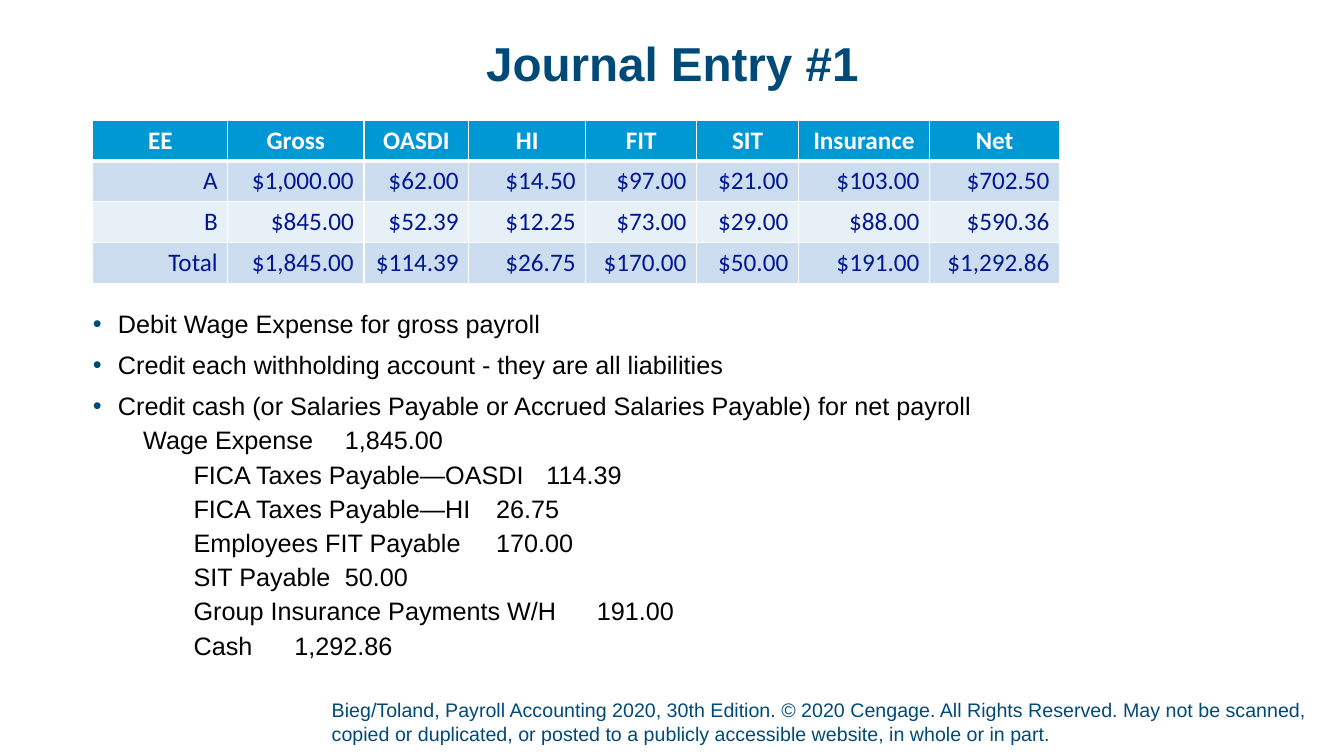
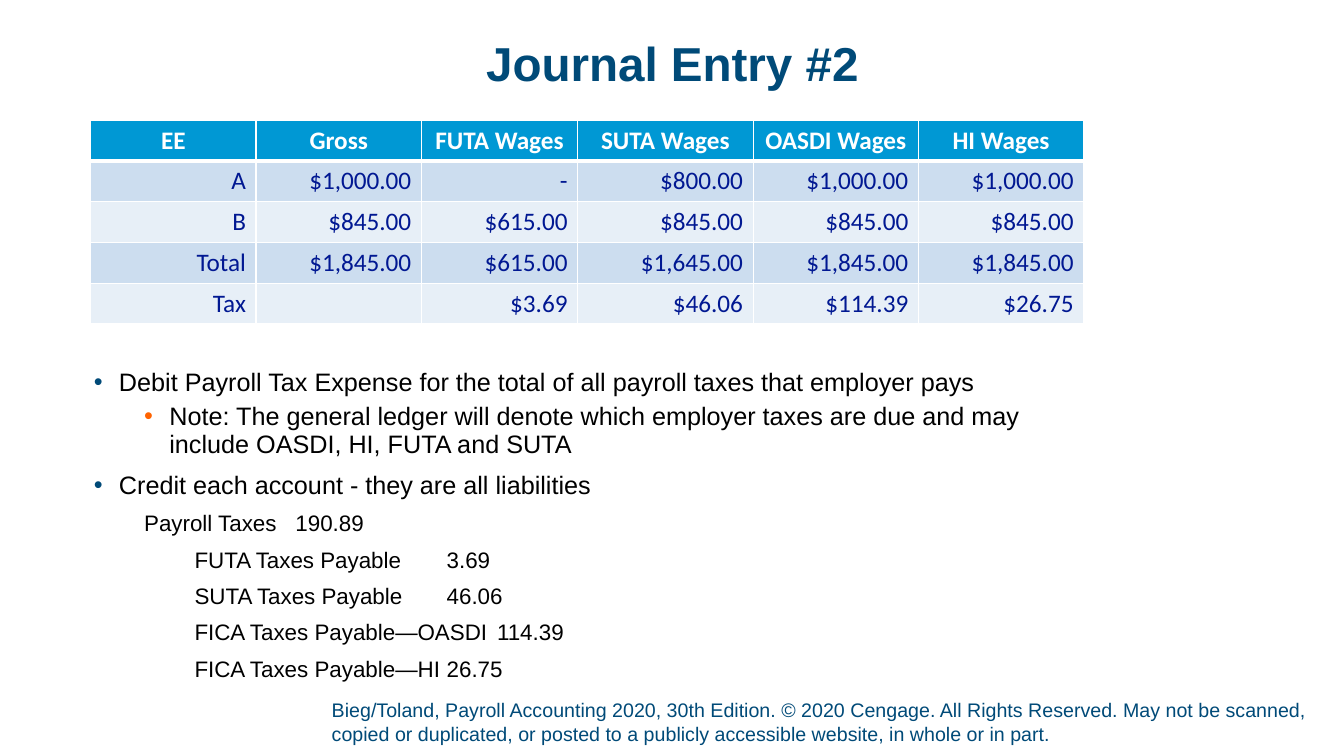
from lxml import etree
from pptx import Presentation
from pptx.dml.color import RGBColor
from pptx.enum.text import MSO_ANCHOR, PP_ALIGN
from pptx.oxml.ns import qn
from pptx.util import Inches, Pt

NAVY = RGBColor(0x00, 0x4A, 0x78)
ORANGE = RGBColor(0xFF, 0x63, 0x00)
BLACK = RGBColor(0x00, 0x00, 0x00)
WHITE = RGBColor(0xFF, 0xFF, 0xFF)
HEADER_BLUE = RGBColor(0x00, 0x98, 0xD4)
CELL_BLUE = RGBColor(0x01, 0x18, 0x92)
BANDS = [RGBColor(0xCC, 0xDD, 0xEF), RGBColor(0xE7, 0xEF, 0xF7)]
TOP, BOTTOM = MSO_ANCHOR.TOP, MSO_ANCHOR.BOTTOM
CENTER, RIGHT = PP_ALIGN.CENTER, PP_ALIGN.RIGHT
ROW_HEIGHT = 0.405

FOOTER = ("Bieg/Toland, Payroll Accounting 2020, 30th Edition. © 2020 Cengage. "
          "All Rights Reserved. May not be scanned, copied or duplicated, or posted "
          "to a publicly accessible website, in whole or in part.")

# Bullets are (level, text); ledger lines are (column, account, amount),
# with column 0 for debits and 1 for credits.
SLIDES = [
    {
        "title": "Journal Entry #1",
        "table_left": 0.92,
        "columns": [1.34, 1.35, 1.04, 1.16, 1.1, 1.01, 1.3, 1.29],
        "rows": [
            ["EE", "Gross", "OASDI", "HI", "FIT", "SIT", "Insurance", "Net"],
            ["A", "$1,000.00", "$62.00", "$14.50", "$97.00", "$21.00", "$103.00", "$702.50"],
            ["B", "$845.00", "$52.39", "$12.25", "$73.00", "$29.00", "$88.00", "$590.36"],
            ["Total", "$1,845.00", "$114.39", "$26.75", "$170.00", "$50.00", "$191.00",
             "$1,292.86"],
        ],
        "body": (0.92, 3.09, 9.82, 3.5),
        "bullets": [
            (0, "Debit Wage Expense for gross payroll"),
            (0, "Credit each withholding account - they are all liabilities"),
            (0, "Credit cash (or Salaries Payable or Accrued Salaries Payable) for net payroll"),
        ],
        "ledger_size": 18, "ledger_spacing": 0.9, "amount_tabs": (6.46, 7.96),
        "ledger": [
            (0, "Wage Expense", "1,845.00"),
            (1, "FICA Taxes Payable—OASDI", "114.39"),
            (1, "FICA Taxes Payable—HI", "26.75"),
            (1, "Employees FIT Payable", "170.00"),
            (1, "SIT Payable", "50.00"),
            (1, "Group Insurance Payments W/H", "191.00"),
            (1, "Cash", "1,292.86"),
        ],
    },
    {
        "title": "Journal Entry #2",
        "table_left": 0.9,
        "columns": [1.64, 1.64, 1.55, 1.74, 1.64, 1.64],
        "rows": [
            ["EE", "Gross", "FUTA Wages", "SUTA Wages", "OASDI Wages", "HI Wages"],
            ["A", "$1,000.00", "-", "$800.00", "$1,000.00", "$1,000.00"],
            ["B", "$845.00", "$615.00", "$845.00", "$845.00", "$845.00"],
            ["Total", "$1,845.00", "$615.00", "$1,645.00", "$1,845.00", "$1,845.00"],
            ["Tax", "", "$3.69", "$46.06", "$114.39", "$26.75"],
        ],
        "body": (0.93, 3.67, 9.82, 3.14),
        "bullets": [
            (0, "Debit Payroll Tax Expense for the total of all payroll taxes that employer pays"),
            (1, "Note: The general ledger will denote which employer taxes are due and may "
                "include OASDI, HI, FUTA and SUTA"),
            (0, "Credit each account - they are all liabilities"),
        ],
        "ledger_size": 16, "ledger_spacing": Pt(21), "amount_tabs": (5.18, 6.68),
        "ledger": [
            (0, "Payroll Taxes", "190.89"),
            (1, "FUTA Taxes Payable", "3.69"),
            (1, "SUTA Taxes Payable", "46.06"),
            (1, "FICA Taxes Payable—OASDI", "114.39"),
            (1, "FICA Taxes Payable—HI", "26.75"),
        ],
    },
]


def add_box(s, left, top, width, height, anchor=TOP, bottom_inset=0):
    sp = s.shapes.add_textbox(Inches(left), Inches(top), Inches(width), Inches(height))
    tf = sp.text_frame
    tf.word_wrap = True
    tf.vertical_anchor = anchor
    tf.margin_left = tf.margin_top = tf.margin_right = 0
    tf.margin_bottom = Inches(bottom_inset)
    return tf


def add_run(p, text, size, color, font="Arial", bold=False):
    r = p.add_run()
    r.text = text
    r.font.name = font
    r.font.size = Pt(size)
    r.font.bold = bold
    r.font.color.rgb = color


prs = Presentation()
prs.slide_width, prs.slide_height = Inches(13.33), Inches(7.5)

for data in SLIDES:
    s = prs.slides.add_slide(prs.slide_layouts[6])

    # Footer and title
    tf = add_box(s, 3.29, 6.92, 9.79, 0.52, BOTTOM, 0.05)
    add_run(tf.paragraphs[0], FOOTER, 14, NAVY)
    p = add_box(s, 0.92, 0.4, 11.5, 0.74).paragraphs[0]
    p.alignment = CENTER
    p.line_spacing = 0.9
    add_run(p, data["title"], 34, NAVY, bold=True)

    # Bullets
    tf = add_box(s, *data["body"])
    p = tf.paragraphs[0]
    for i, (level, text) in enumerate(data["bullets"]):
        if i:
            p = tf.add_paragraph()
        pPr = p._p.get_or_add_pPr()
        pPr.set("marL", str(Inches(0.25 + 0.5 * level)))
        pPr.set("indent", str(-Inches(0.25)))
        color = etree.SubElement(pPr, qn("a:buClr"))
        etree.SubElement(color, qn("a:srgbClr"), val=str((NAVY, ORANGE)[level]))
        etree.SubElement(pPr, qn("a:buFont"), typeface="Arial")
        etree.SubElement(pPr, qn("a:buChar"), char="•")
        p.level = level
        p.line_spacing = 0.9
        p.space_before = Pt((10, 5)[level] if i else 0)
        add_run(p, text, 18, BLACK)

    # Ledger lines, amounts on right-aligned tabs
    for column, account, amount in data["ledger"]:
        p = tf.add_paragraph()
        pPr = p._p.get_or_add_pPr()
        pPr.set("marL", "0")
        pPr.set("indent", str(Inches((0.5, 1)[column])))
        etree.SubElement(pPr, qn("a:buNone"))
        tabs = etree.SubElement(pPr, qn("a:tabLst"))
        etree.SubElement(tabs, qn("a:tab"),
                         pos=str(Inches(data["amount_tabs"][column])), algn="r")
        p.level = column + 1
        p.line_spacing = data["ledger_spacing"]
        p.space_before = Pt(5)
        add_run(p, f"{account}\t{amount}", data["ledger_size"], BLACK)

    # Payroll table
    rows, columns = data["rows"], data["columns"]
    table = s.shapes.add_table(
        len(rows), len(columns), Inches(data["table_left"]), Inches(1.19),
        Inches(sum(columns)), Inches(ROW_HEIGHT * len(rows))).table
    for j, width in enumerate(columns):
        table.columns[j].width = Inches(width)
    for i, row in enumerate(rows):
        header = i == 0
        for j, text in enumerate(row):
            cell = table.cell(i, j)
            tcPr = cell._tc.get_or_add_tcPr()
            for side in "LRTB":
                heavy = (header and side == "B") or (i == 1 and side == "T")
                ln = etree.SubElement(tcPr, qn(f"a:ln{side}"), w=str(Pt(3 if heavy else 1)))
                fill = etree.SubElement(ln, qn("a:solidFill"))
                etree.SubElement(fill, qn("a:srgbClr"), val=str(WHITE))
            cell.fill.solid()
            cell.fill.fore_color.rgb = HEADER_BLUE if header else BANDS[(i - 1) % 2]
            p = cell.text_frame.paragraphs[0]
            p.alignment = CENTER if header else RIGHT
            if text:
                add_run(p, text, 18, WHITE if header else CELL_BLUE, "Calibri", header)

prs.save("out.pptx")
